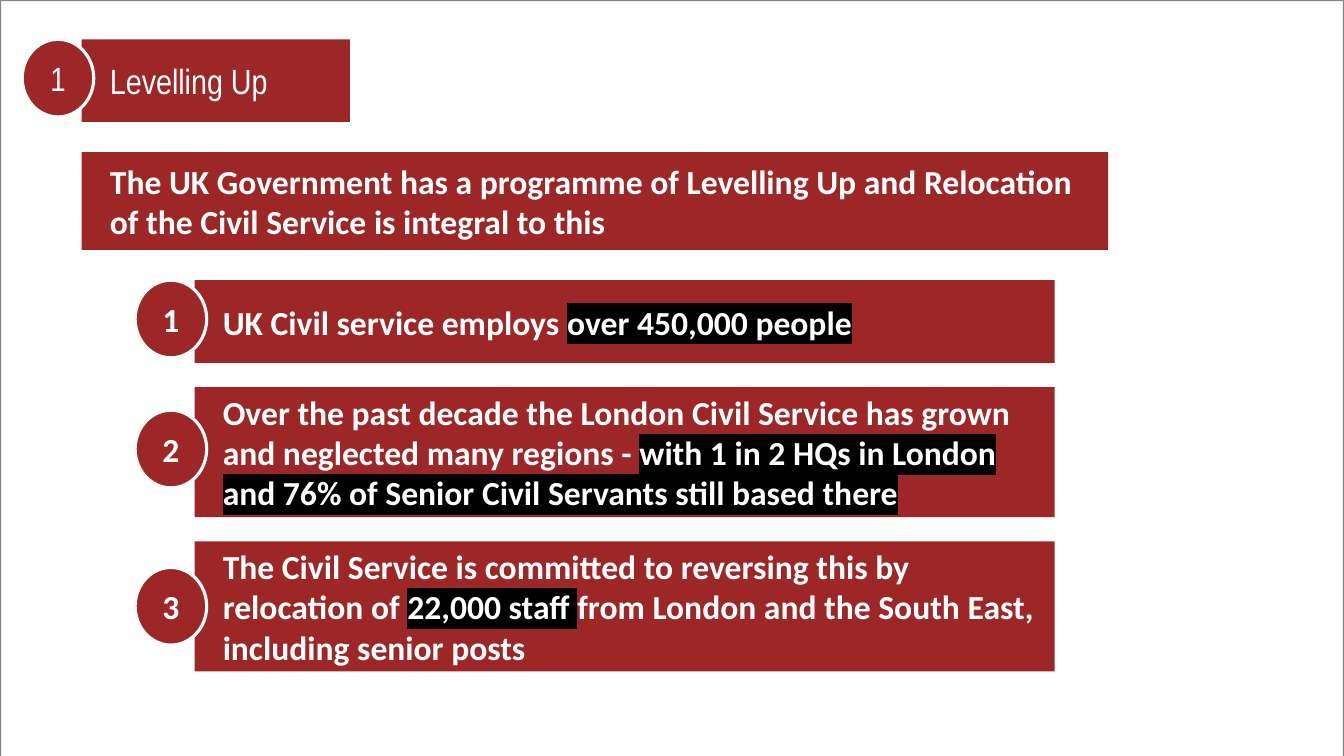
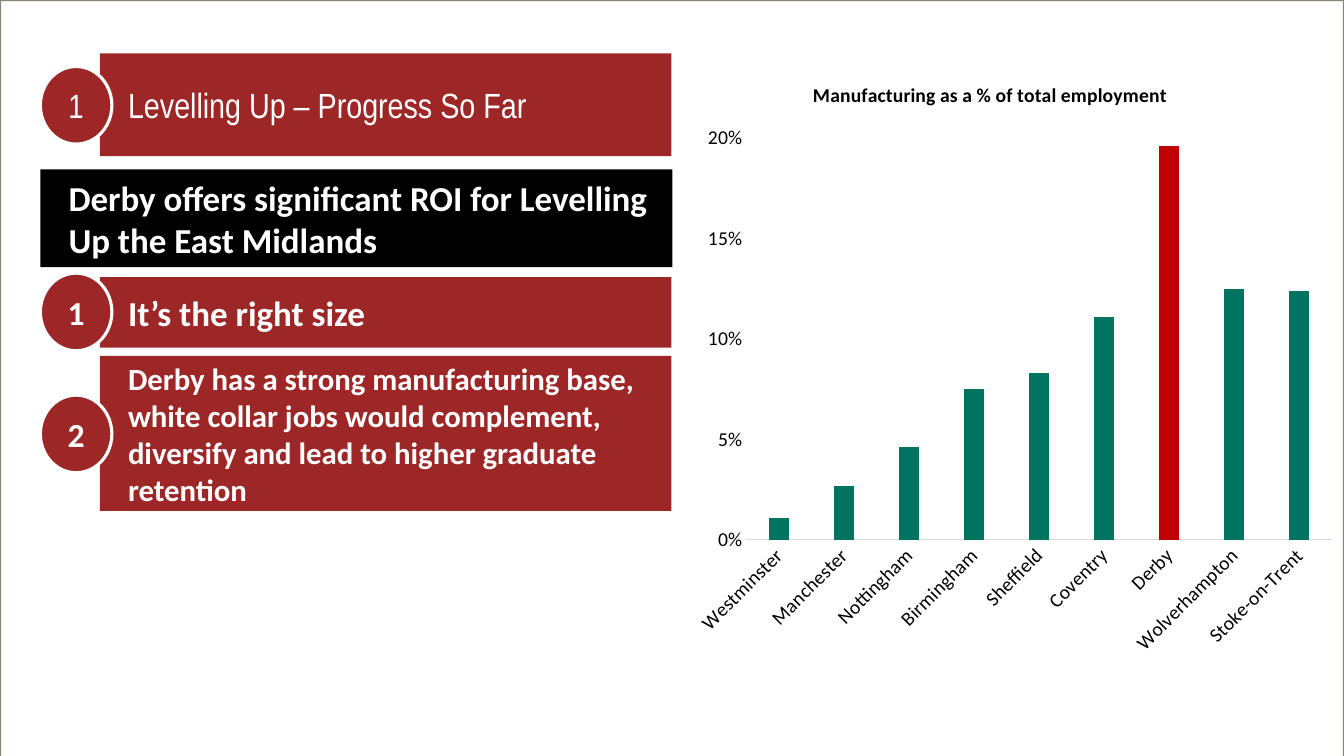
from dataclasses import dataclass

from lxml.etree import SubElement
from pptx import Presentation
from pptx.chart.data import CategoryChartData
from pptx.dml.color import RGBColor
from pptx.enum.chart import XL_CHART_TYPE as ChartType, XL_TICK_MARK as TickMark
from pptx.enum.shapes import MSO_SHAPE as Preset
from pptx.enum.text import MSO_ANCHOR as Anchor, MSO_AUTO_SIZE as AutoSize, PP_ALIGN as Align
from pptx.oxml.ns import qn
from pptx.util import Inches, Pt


@dataclass(frozen=True)
class Theme:
    red: str = "9D2727"
    black: str = "000000"
    white: str = "FFFFFF"
    backdrop: str = "AFC1BC"
    frame: str = "584F45"
    column: str = "007461"
    highlight_column: str = "C00000"
    axis: str = "D9D9D9"
    title_font: str = "Arial Narrow"
    body_font: str = "Calibri"
    title_size: int = 25
    body_size: int = 24
    small_size: int = 22
    chart_size: int = 14


THEME = Theme()
BADGE_WIDTH, BADGE_HEIGHT, BADGE_OVERHANG = 0.71, 0.77, 0.59


@dataclass(frozen=True)
class Span:
    text: str
    marked: bool = False


@dataclass(frozen=True)
class Band:
    """A filled text band, with a numbered badge when it has a number."""
    left: float
    top: float
    width: float
    height: float
    spans: tuple[Span, ...]
    number: str = ""
    badge_top: float = 0
    size: int = THEME.body_size
    fill: str = THEME.red


def rgb(value: str) -> RGBColor:
    return RGBColor.from_string(value)


# Text and shapes
def write(shape, spans, *, font=THEME.body_font, size=THEME.body_size,
          bold=True, align=Align.LEFT) -> None:
    para = shape.text_frame.paragraphs[0]
    para.alignment = align
    for span in spans:
        run = para.add_run()
        run.text = span.text
        run.font.name, run.font.size, run.font.bold = font, Pt(size), bold
        run.font.color.rgb = rgb(THEME.white)
        if span.marked:
            props = run.font._rPr
            mark = SubElement(props, qn("a:highlight"))
            SubElement(mark, qn("a:srgbClr"), val=THEME.black)
            props.find(qn("a:solidFill")).addnext(mark)


def paint(shape, fill: str) -> None:
    shape.shadow.inherit = False
    shape.fill.solid()
    shape.fill.fore_color.rgb = rgb(fill)


def format_band(shape, band: Band, **text_format) -> None:
    shape.left, shape.top = Inches(band.left), Inches(band.top)
    shape.width, shape.height = Inches(band.width), Inches(band.height)
    paint(shape, band.fill)
    shape.line.fill.background()
    frame = shape.text_frame
    frame.word_wrap, frame.auto_size = True, AutoSize.NONE
    frame.vertical_anchor = Anchor.MIDDLE
    frame.margin_left, frame.margin_right = Inches(0.28), Inches(0.1)
    frame.margin_top = frame.margin_bottom = Inches(0.05)
    write(shape, band.spans, size=band.size, **text_format)


def add_badge(page, band: Band, **text_format) -> None:
    badge = page.shapes.add_shape(
        Preset.OVAL, Inches(band.left - BADGE_OVERHANG), Inches(band.badge_top),
        Inches(BADGE_WIDTH), Inches(BADGE_HEIGHT))
    paint(badge, THEME.red)
    badge.line.color.rgb = rgb(THEME.white)
    badge.line.width = Pt(2.25)
    badge.text_frame.vertical_anchor = Anchor.MIDDLE
    write(badge, [Span(band.number)], align=Align.CENTER, **text_format)


def add_band(page, band: Band) -> None:
    box = page.shapes.add_shape(Preset.RECTANGLE, 0, 0, 0, 0)
    format_band(box, band)
    if band.number:
        add_badge(page, band)


def add_page(deck, layout, title: Band, bands):
    page = deck.slides.add_slide(layout)
    title_format = {"font": THEME.title_font, "bold": False}
    format_band(page.shapes.title, title, **title_format)
    add_badge(page, title, **title_format)
    for band in bands:
        add_band(page, band)
    return page


def add_frame(page, layout) -> None:
    """Put the white framed panel behind every page that uses the layout."""
    panel = page.shapes.add_shape(
        Preset.RECTANGLE, 0, 0, Inches(13.33), Inches(7.55))
    paint(panel, THEME.white)
    panel.line.color.rgb = rgb(THEME.frame)
    panel.line.width = Pt(1.5)
    color = panel.element.xpath("p:spPr/a:ln/a:solidFill/a:srgbClr")[0]
    SubElement(color, qn("a:alpha"), val="70000")
    layout.shapes.element.insert(2, panel.element)


# Chart
def place(parent, index: int, **fractions: float) -> None:
    """Give a chart part a fixed place, in fractions of the chart."""
    for old in parent.findall(qn("c:layout")):
        parent.remove(old)
    layout = SubElement(parent, qn("c:layout"))
    parent.insert(index, layout)
    manual = SubElement(layout, qn("c:manualLayout"))
    if "w" in fractions:
        SubElement(manual, qn("c:layoutTarget"), val="inner")
    for mode in ("xMode", "yMode"):
        SubElement(manual, qn(f"c:{mode}"), val="edge")
    for name, value in fractions.items():
        SubElement(manual, qn(f"c:{name}"), val=str(value))


def format_font(font, bold: bool = False) -> None:
    font.name, font.size, font.bold = THEME.body_font, Pt(THEME.chart_size), bold
    font.color.rgb = rgb(THEME.black)


def add_employment_chart(page, shares: dict[str, float], highlighted: str) -> None:
    data = CategoryChartData(number_format="0.0%")
    data.categories = list(shares)
    data.add_series("Series 1", list(shares.values()))
    chart = page.shapes.add_chart(
        ChartType.COLUMN_CLUSTERED, Inches(6.78), Inches(0.53),
        Inches(6.56), Inches(6.08), data).chart
    chart.has_legend = False
    format_font(chart.font)

    chart.has_title = True
    para = chart.chart_title.text_frame.paragraphs[0]
    run = para.add_run()
    run.text = "Manufacturing as a % of total employment"
    format_font(run.font, bold=True)
    chart.chart_title.include_in_layout = False
    place(chart.element.xpath("c:chart/c:title")[0], 1, x=0.19, y=0.04)
    place(chart.element.xpath("c:chart/c:plotArea")[0], 0,
          x=0.095, y=0.138, w=0.885, h=0.656)

    for axis in (chart.category_axis, chart.value_axis):
        axis.major_tick_mark = axis.minor_tick_mark = TickMark.NONE
        axis.has_major_gridlines = False
        format_font(axis.tick_labels.font)
    chart.category_axis.format.line.color.rgb = rgb(THEME.axis)
    chart.category_axis.format.line.width = Pt(0.75)
    chart.element.xpath("//c:catAx/c:txPr/a:bodyPr")[0].set("rot", "-2700000")
    values = chart.value_axis
    values.minimum_scale, values.maximum_scale, values.major_unit = 0, 0.2, 0.05
    values.tick_labels.number_format = "0%"
    values.tick_labels.number_format_is_linked = False
    values.format.line.fill.background()

    plot = chart.plots[0]
    plot.vary_by_categories = False
    plot.gap_width, plot.overlap = 219, -27
    series = plot.series[0]
    point = series.points[list(shares).index(highlighted)]
    for part, color in ((series, THEME.column), (point, THEME.highlight_column)):
        part.format.fill.solid()
        part.format.fill.fore_color.rgb = rgb(color)


# Content
LEVELLING_TITLE = Band(0.81, 0.39, 2.66, 0.82, (Span("Levelling Up"),),
                       "1", 0.39, THEME.title_size)
LEVELLING_BANDS = (
    Band(0.81, 1.51, 10.18, 0.97, (
        Span("The UK Government has a programme of Levelling Up and Relocation "
             "of the Civil Service is integral to this"),)),
    Band(1.93, 2.78, 8.53, 0.82, (
        Span("UK Civil service employs "),
        Span("over 450,000 people", marked=True)), "1", 2.78),
    Band(1.93, 3.84, 8.53, 1.29, (
        Span("Over the past decade the London Civil Service has grown "
             "and neglected many regions - "),
        Span("with 1 in 2 HQs in London and 76% of Senior Civil Servants "
             "still based there", marked=True)), "2", 4.07),
    Band(1.93, 5.37, 8.53, 1.29, (
        Span("The Civil Service is committed to reversing this by relocation of "),
        Span("22,000 staff ", marked=True),
        Span("from London and the South East, including senior posts")), "3", 5.63),
)
PROGRESS_TITLE = Band(0.99, 0.53, 5.67, 1.02,
                      (Span("Levelling Up – Progress So Far"),),
                      "1", 0.66, THEME.title_size)
PROGRESS_BANDS = (
    Band(0.4, 1.68, 6.27, 0.97, (
        Span("Derby offers significant ROI for Levelling Up the East Midlands"),),
        size=THEME.title_size, fill=THEME.black),
    Band(0.99, 2.75, 5.67, 0.7, (Span("It’s the right size"),),
         "1", 2.71, THEME.title_size),
    Band(0.99, 3.53, 5.67, 1.54, (
        Span("Derby has a strong manufacturing base, white collar jobs would "
             "complement, diversify and lead to higher graduate retention"),),
        "2", 3.92, THEME.small_size),
)
MANUFACTURING_SHARES = {
    "Westminster": 0.011, "Manchester": 0.027, "Nottingham": 0.046,
    "Birmingham": 0.075, "Sheffield": 0.083, "Coventry": 0.111,
    "Derby": 0.196, "Wolverhampton": 0.125, "Stoke-on-Trent": 0.124,
}


def main() -> None:
    deck = Presentation()
    deck.slide_width, deck.slide_height = Inches(13.33), Inches(7.5)
    layout = deck.slide_layouts.get_by_name("Title Only")
    background = deck.slide_master.background.fill
    background.solid()
    background.fore_color.rgb = rgb(THEME.backdrop)

    levelling = add_page(deck, layout, LEVELLING_TITLE, LEVELLING_BANDS)
    add_frame(levelling, layout)
    progress = add_page(deck, layout, PROGRESS_TITLE, PROGRESS_BANDS)
    add_employment_chart(progress, MANUFACTURING_SHARES, "Derby")
    deck.save("out.pptx")


if __name__ == "__main__":
    main()
